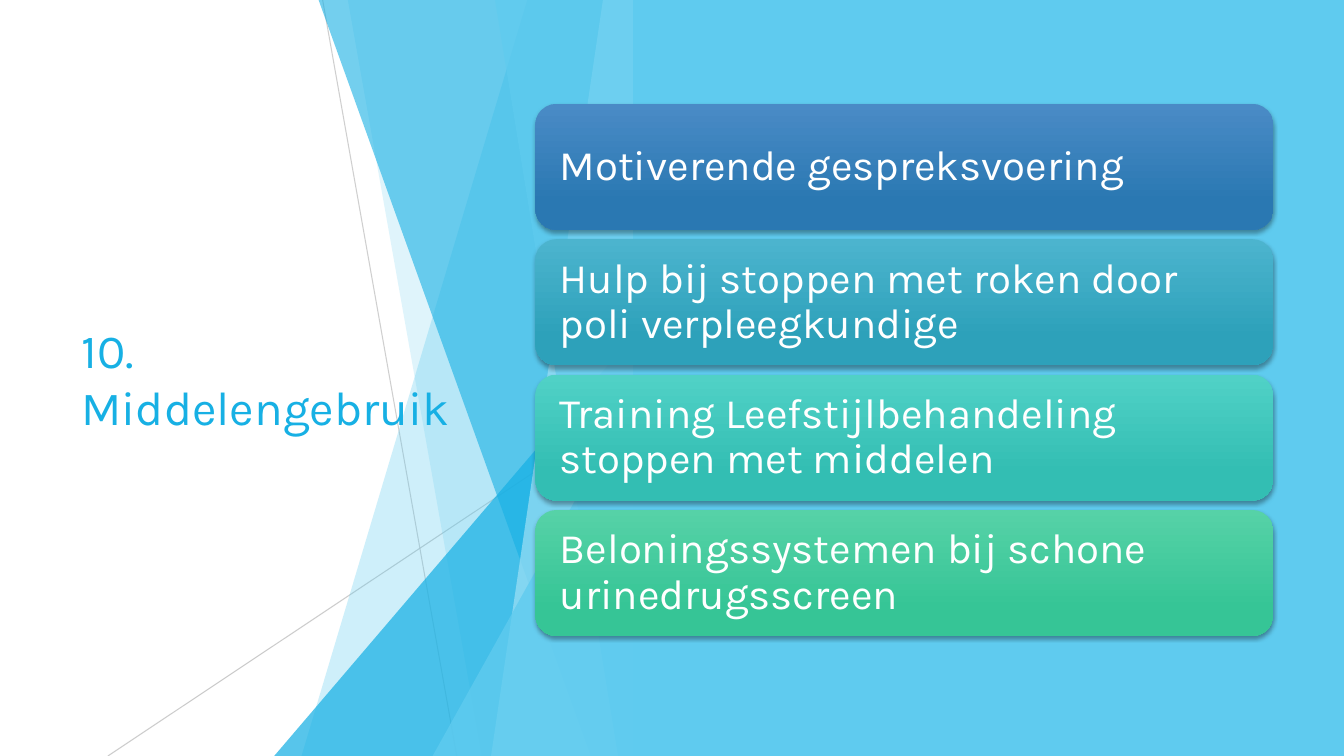
"""Build the slide on substance use with four treatment cards."""
from dataclasses import dataclass

from lxml import etree
from pptx import Presentation
from pptx.dml.color import RGBColor
from pptx.enum.shapes import MSO_CONNECTOR, MSO_SHAPE
from pptx.enum.text import MSO_ANCHOR, PP_ALIGN
from pptx.oxml.ns import qn
from pptx.util import Inches, Pt

STRAIGHT = MSO_CONNECTOR.STRAIGHT
RECTANGLE = MSO_SHAPE.RECTANGLE
ROUNDED = MSO_SHAPE.ROUNDED_RECTANGLE
TRIANGLE = MSO_SHAPE.ISOSCELES_TRIANGLE
MIDDLE = MSO_ANCHOR.MIDDLE
LEFT = PP_ALIGN.LEFT

WHITE = RGBColor(0xFF, 0xFF, 0xFF)
BLACK = RGBColor(0x00, 0x00, 0x00)
GREY = RGBColor(0xBF, 0xBF, 0xBF)
SKY = RGBColor(0x5F, 0xCB, 0xEF)
PALE_SKY = RGBColor(0x9F, 0xE0, 0xF5)
CYAN = RGBColor(0x17, 0xB0, 0xE4)

FONT = "Karla"
SLIDE_W, SLIDE_H = 13.33, 7.5
PANEL_LEFT = 6.28
CARD_LEFT, CARD_TOP, CARD_W, CARD_H, CARD_PITCH = 5.31, 1.03, 7.32, 1.25, 1.343


@dataclass(frozen=True)
class Ray:
    start: tuple[float, float]
    end: tuple[float, float]
    opacity: int


@dataclass(frozen=True)
class Band:
    """Shard from the top edge to the bottom edge, closed by the panel."""
    top_x: float
    bottom_x: float
    color: RGBColor
    opacity: int


@dataclass(frozen=True)
class Wedge:
    """Right-angled triangle resting on the bottom edge and the panel."""
    left: float
    top: float
    color: RGBColor
    opacity: int


@dataclass(frozen=True)
class Card:
    text: str
    upper: RGBColor
    lower: RGBColor


RAYS = [
    Ray((3.2, 0), (4.53, SLIDE_H), 75),
    Ray((PANEL_LEFT, 4.03), (1.07, SLIDE_H), 80),
]
SHARDS = [
    Band(5.23, 2.99, SKY, 30),
    Band(3.45, 4.78, SKY, 20),
    Wedge(2.72, 3.33, CYAN, 72),
    Band(3.16, 5.86, CYAN, 60),
    Band(5.98, 4.87, PALE_SKY, 70),
    Band(4.91, 6.13, SKY, 65),
    Wedge(4.29, 3.93, SKY, 80),
]
CARDS = [
    Card("Motiverende gespreksvoering",
         RGBColor(0x4A, 0x8B, 0xC6), RGBColor(0x2A, 0x78, 0xB2)),
    Card("Hulp bij stoppen met roken door poli verpleegkundige",
         RGBColor(0x4C, 0xB4, 0xCE), RGBColor(0x2D, 0xA1, 0xBA)),
    Card("Training Leefstijlbehandeling stoppen met middelen",
         RGBColor(0x50, 0xD1, 0xC6), RGBColor(0x33, 0xBE, 0xB3)),
    Card("Beloningssystemen bij schone urinedrugsscreen",
         RGBColor(0x56, 0xD2, 0xA7), RGBColor(0x36, 0xC5, 0x96)),
]


def set_opacity(element, percent: int) -> None:
    color = next(element.iter(qn("a:srgbClr")))
    etree.SubElement(color, qn("a:alpha"), val=str(percent * 1000))


def paint(shape, color: RGBColor, opacity: int = 100) -> None:
    shape.shadow.inherit = False
    shape.line.fill.background()
    shape.fill.solid()
    shape.fill.fore_color.rgb = color
    if opacity < 100:
        set_opacity(shape.element.spPr, opacity)


def write(frame, text: str, size: float, color: RGBColor) -> None:
    frame.word_wrap = True
    frame.vertical_anchor = MIDDLE
    paragraph = frame.paragraphs[0]
    paragraph.text = text
    paragraph.alignment = LEFT
    paragraph.font.name = FONT
    paragraph.font.size = Pt(size)
    paragraph.font.color.rgb = color


def draw_ray(shapes, ray: Ray) -> None:
    points = [Inches(value) for value in ray.start + ray.end]
    line = shapes.add_connector(STRAIGHT, *points)
    line.line.color.rgb = GREY
    line.line.width = Pt(0.75)
    properties = line.element.spPr
    set_opacity(properties, ray.opacity)
    etree.SubElement(properties, qn("a:effectLst"))


def draw_shard(shapes, shard: Band | Wedge) -> None:
    if isinstance(shard, Band):
        builder = shapes.build_freeform(Inches(shard.top_x), 0)
        corners = [(PANEL_LEFT, 0), (PANEL_LEFT, SLIDE_H), (shard.bottom_x, SLIDE_H)]
        builder.add_line_segments([(Inches(x), Inches(y)) for x, y in corners])
        shape = builder.convert_to_shape()
    else:
        shape = shapes.add_shape(
            TRIANGLE, Inches(shard.left), Inches(shard.top),
            Inches(PANEL_LEFT - shard.left), Inches(SLIDE_H - shard.top))
        shape.adjustments[0] = 1
    paint(shape, shard.color, shard.opacity)


def draw_card(shapes, card: Card, top: float) -> None:
    box = shapes.add_shape(ROUNDED, Inches(CARD_LEFT), Inches(top),
                           Inches(CARD_W), Inches(CARD_H))
    box.line.fill.background()
    box.fill.gradient()
    box.fill.gradient_angle = 270
    stops = zip(box.fill.gradient_stops, (card.upper, card.lower), (0, 0.78))
    for stop, color, position in stops:
        stop.color.rgb = color
        stop.position = position

    box.shadow.inherit = False
    effects = box.element.spPr.find(qn("a:effectLst"))
    shadow = etree.SubElement(
        effects, qn("a:outerShdw"), blurRad=str(Pt(3)), dist=str(Pt(2)),
        dir="5400000", algn="ctr", rotWithShape="0")
    etree.SubElement(shadow, qn("a:srgbClr"), val=str(BLACK))
    set_opacity(shadow, 35)

    frame = box.text_frame
    frame.margin_left = frame.margin_right = Inches(0.18)
    write(frame, card.text, 30, WHITE)
    frame.paragraphs[0].line_spacing = 0.9


def main() -> None:
    deck = Presentation()
    deck.slide_width, deck.slide_height = Inches(SLIDE_W), Inches(SLIDE_H)
    shapes = deck.slides.add_slide(deck.slide_layouts[6]).shapes

    for ray in RAYS:
        draw_ray(shapes, ray)
    for shard in SHARDS:
        draw_shard(shapes, shard)

    title = shapes.add_textbox(Inches(0.71), Inches(1.51), Inches(3.88), Inches(4.48))
    write(title.text_frame, "10. Middelengebruik", 34, CYAN)

    panel = shapes.add_shape(RECTANGLE, Inches(PANEL_LEFT), 0,
                             Inches(SLIDE_W - PANEL_LEFT), Inches(SLIDE_H))
    paint(panel, SKY)
    for row, card in enumerate(CARDS):
        draw_card(shapes, card, CARD_TOP + row * CARD_PITCH)

    deck.save("out.pptx")


if __name__ == "__main__":
    main()
